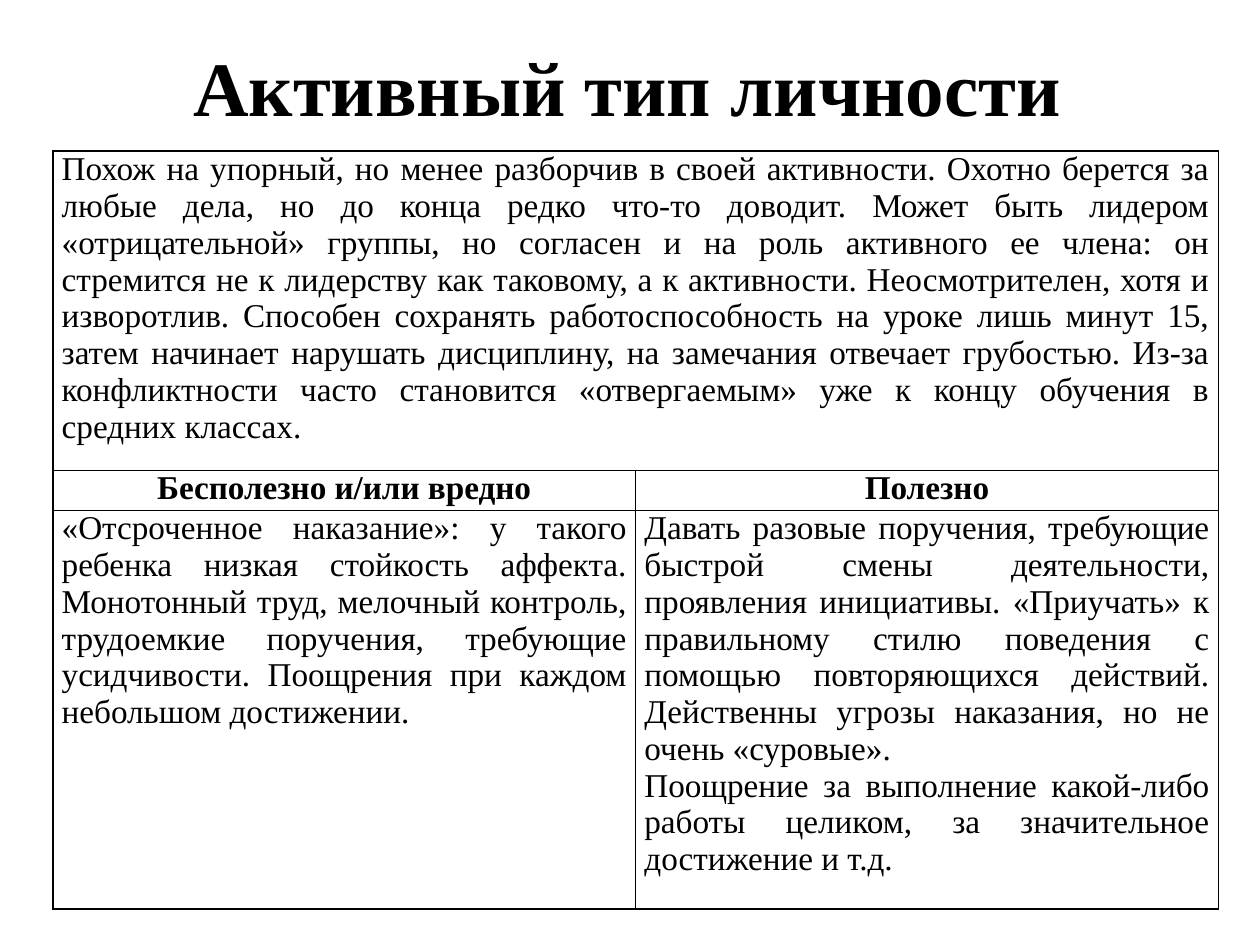
import pptx
import pptx.dml.color
import pptx.enum.text
import pptx.oxml
import pptx.oxml.ns
import pptx.util
from pptx.util import Inches

COLORS = {"text": "000000", "border": "000000", "cell": "FFFFFF"}
FONT = "Times New Roman"
ALIGN = pptx.enum.text.PP_ALIGN
ANCHOR = pptx.enum.text.MSO_ANCHOR

DESCRIPTION = (
    "Похож на упорный, но менее разборчив в своей активности. Охотно берется за "
    "любые дела, но до конца редко что-то доводит. Может быть лидером "
    "«отрицательной» группы, но согласен и на роль активного ее члена: он "
    "стремится не к лидерству как таковому, а к активности. Неосмотрителен, хотя и "
    "изворотлив. Способен сохранять работоспособность на уроке лишь минут 15, "
    "затем начинает нарушать дисциплину, на замечания отвечает грубостью. Из-за "
    "конфликтности часто становится «отвергаемым» уже к концу обучения в "
    "средних классах."
)
HEADINGS = ["Бесполезно и/или вредно", "Полезно"]
HARMFUL = [
    "«Отсроченное наказание»: у такого ребенка низкая стойкость аффекта. "
    "Монотонный труд, мелочный контроль, трудоемкие поручения, требующие "
    "усидчивости. Поощрения при каждом небольшом достижении."
]
USEFUL = [
    "Давать разовые поручения, требующие быстрой смены деятельности, "
    "проявления инициативы. «Приучать» к правильному стилю поведения с "
    "помощью повторяющихся действий. Действенны угрозы наказания, но не "
    "очень «суровые».",
    "Поощрение за выполнение какой-либо работы целиком, за значительное "
    "достижение и т.д.",
]


def write_text(frame, paragraphs, size=19, bold=False, align=ALIGN.JUSTIFY, spacing=None):
    frame.word_wrap = True
    for index, text in enumerate(paragraphs):
        paragraph = frame.paragraphs[0] if index == 0 else frame.add_paragraph()
        paragraph.alignment = align
        paragraph.line_spacing = spacing
        run = paragraph.add_run()
        run.text = text
        run.font.name = FONT
        run.font.size = pptx.util.Pt(size)
        run.font.bold = bold
        run.font.color.rgb = pptx.dml.color.RGBColor.from_string(COLORS["text"])


def style_cell(cell):
    cell.margin_left = cell.margin_right = Inches(0.07)
    cell.margin_top = cell.margin_bottom = 0
    # Borders come before the fill in the cell properties
    properties = cell._tc.get_or_add_tcPr()
    for side in ("lnL", "lnR", "lnT", "lnB"):
        properties.append(pptx.oxml.parse_xml(
            f'<a:{side} {pptx.oxml.ns.nsdecls("a")} w="{pptx.util.Pt(1)}">'
            f'<a:solidFill><a:srgbClr val="{COLORS["border"]}"/></a:solidFill></a:{side}>'
        ))
    cell.fill.solid()
    cell.fill.fore_color.rgb = pptx.dml.color.RGBColor.from_string(COLORS["cell"])


def add_title(slide, left, top, width, height):
    title = slide.shapes.add_textbox(left, top, width, height)
    title.text_frame.vertical_anchor = ANCHOR.MIDDLE
    write_text(title.text_frame, ["Активный тип личности"], size=44, bold=True,
               align=ALIGN.CENTER, spacing=0.9)


def add_advice_table(slide, left, top, width, height):
    frame = slide.shapes.add_table(3, 2, left, top, width, height)
    table = frame.table
    for column in table.columns:
        column.width = width // 2
    # Rows take the height of their text
    for row in table.rows:
        row.height = 0
    frame.height = height
    for cell in table.iter_cells():
        style_cell(cell)

    # Description across both columns
    table.cell(0, 0).merge(table.cell(0, 1))
    write_text(table.cell(0, 0).text_frame, [DESCRIPTION])

    # Headings with the advice below
    for column, (heading, advice) in enumerate(zip(HEADINGS, (HARMFUL, USEFUL))):
        write_text(table.cell(1, column).text_frame, [heading], bold=True, align=ALIGN.CENTER)
        write_text(table.cell(2, column).text_frame, advice)


def main():
    deck = pptx.Presentation()
    deck.slide_width, deck.slide_height = Inches(10), Inches(7.5)
    slide = deck.slides.add_slide(deck.slide_layouts[6])
    add_title(slide, Inches(0.67), Inches(0), Inches(8.62), Inches(1.45))
    add_advice_table(slide, Inches(0.42), Inches(1.2), Inches(9.25), Inches(6.02))
    deck.save("out.pptx")


if __name__ == "__main__":
    main()
